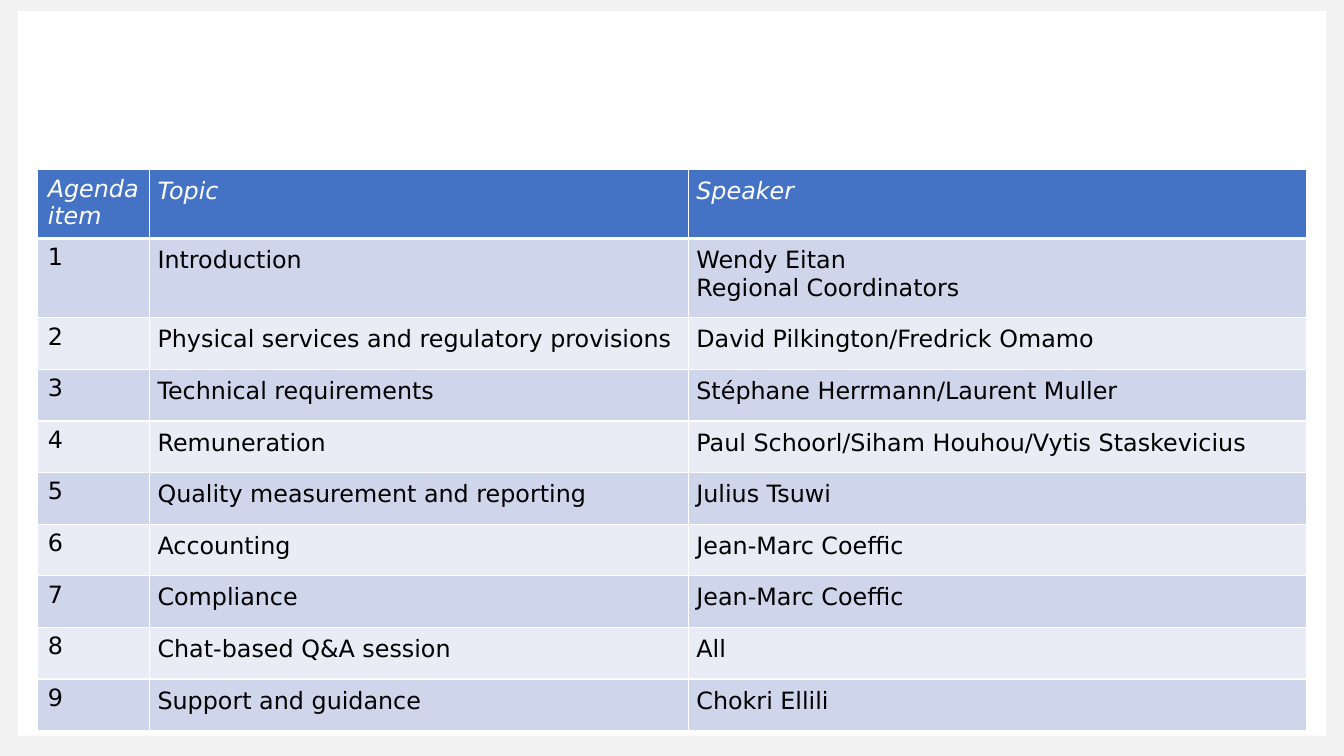
from lxml.etree import SubElement
from pptx import Presentation
from pptx.dml.color import RGBColor
from pptx.enum.shapes import MSO_SHAPE as Shape
from pptx.oxml.ns import qn
from pptx.util import Cm, Pt

WHITE = RGBColor(0xFF, 0xFF, 0xFF)
BLACK = RGBColor(0x00, 0x00, 0x00)
FRAME_GREY = RGBColor(0xF2, 0xF2, 0xF2)
HEADER_BLUE = RGBColor(0x44, 0x72, 0xC4)
BAND_DARK = RGBColor(0xCF, 0xD5, 0xEA)
BAND_LIGHT = RGBColor(0xE9, 0xEB, 0xF5)

WIDTH, HEIGHT = 33.87, 19.05
COLUMN_WIDTHS = [2.82, 13.58, 15.58]
HEADER_HEIGHT, INTRO_HEIGHT, ROW_HEIGHT = 1.73, 2, 1.3

HEADINGS = ["Agenda item", "Topic", "Speaker"]
AGENDA = [
    ("Introduction", "Wendy Eitan\nRegional Coordinators"),
    ("Physical services and regulatory provisions", "David Pilkington/Fredrick Omamo"),
    ("Technical requirements", "Stéphane Herrmann/Laurent Muller"),
    ("Remuneration", "Paul Schoorl/Siham Houhou/Vytis Staskevicius"),
    ("Quality measurement and reporting", "Julius Tsuwi"),
    ("Accounting", "Jean-Marc Coeffic"),
    ("Compliance", "Jean-Marc Coeffic"),
    ("Chat-based Q&A session", "All"),
    ("Support and guidance", "Chokri Ellili"),
]


class AgendaPage:
    font_name = "DejaVu Sans"
    font_size = Pt(17)
    inset = Cm(0.2)

    def __init__(self, page):
        self.page = page

    def panel(self, left, top, width, height, color):
        box = self.page.shapes.add_shape(
            Shape.RECTANGLE, Cm(left), Cm(top), Cm(width), Cm(height))
        box.shadow.inherit = False
        box.fill.solid()
        box.fill.fore_color.rgb = color
        box.line.fill.background()

    def table(self, left, top, rows, widths, heights):
        table = self.page.shapes.add_table(
            len(rows), len(widths), Cm(left), Cm(top),
            Cm(sum(widths)), Cm(sum(heights))).table
        for column, width in zip(table.columns, widths):
            column.width = Cm(width)
        for index, (row, height) in enumerate(zip(rows, heights)):
            table.rows[index].height = Cm(height)
            for position, text in enumerate(row):
                cell = table.cell(index, position)
                if position > 0:
                    cell.margin_left = cell.margin_right = self.inset
                    cell.margin_top = cell.margin_bottom = self.inset
                self.cell_text(cell, text, is_header=index == 0)
                if index == 0:
                    self.header_borders(cell)
                    self.cell_fill(cell, HEADER_BLUE)
                else:
                    self.cell_fill(cell, BAND_DARK if index % 2 else BAND_LIGHT)

    def cell_text(self, cell, text, is_header):
        cell.text_frame.text = text
        for paragraph in cell.text_frame.paragraphs:
            for span in paragraph.runs:
                span.font.name = self.font_name
                span.font.size = self.font_size
                span.font.bold = False
                span.font.italic = is_header
                span.font.color.rgb = WHITE if is_header else BLACK

    def cell_fill(self, cell, color):
        cell.fill.solid()
        cell.fill.fore_color.rgb = color

    def header_borders(self, cell):
        """Draw white edges; call before the fill, which must follow them in the XML."""
        properties = cell._tc.get_or_add_tcPr()
        for side, points in (("L", 1), ("R", 1), ("T", 1), ("B", 3)):
            line = SubElement(properties, qn(f"a:ln{side}"), w=str(Pt(points)))
            solid = SubElement(line, qn("a:solidFill"))
            SubElement(solid, qn("a:srgbClr"), val=str(WHITE))


def main():
    deck = Presentation()
    deck.slide_width, deck.slide_height = Cm(WIDTH), Cm(HEIGHT)
    agenda = AgendaPage(deck.slides.add_slide(deck.slide_layouts[6]))
    agenda.panel(0, 0, WIDTH, HEIGHT, FRAME_GREY)
    agenda.panel(0.45, 0.28, 32.97, 18.26, WHITE)

    rows = [HEADINGS] + [
        (str(number), topic, speaker)
        for number, (topic, speaker) in enumerate(AGENDA, start=1)]
    heights = [HEADER_HEIGHT, INTRO_HEIGHT] + [ROW_HEIGHT] * (len(AGENDA) - 1)
    agenda.table(0.95, 4.28, rows, COLUMN_WIDTHS, heights)
    deck.save("out.pptx")


if __name__ == "__main__":
    main()
